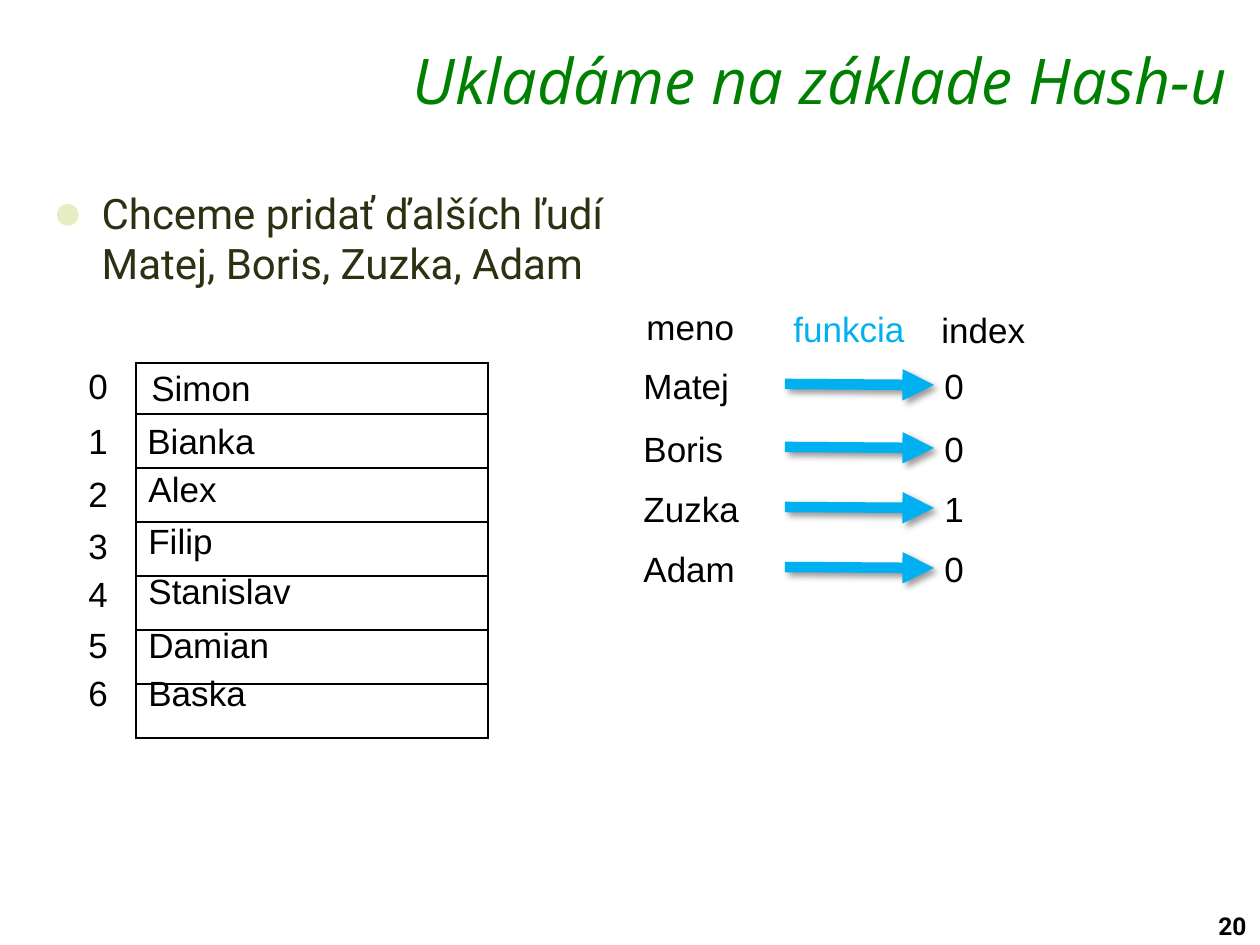
from dataclasses import dataclass

from lxml import etree
from pptx import Presentation
from pptx.dml.color import RGBColor
from pptx.enum.shapes import MSO_CONNECTOR
from pptx.enum.text import MSO_ANCHOR, MSO_AUTO_SIZE, PP_ALIGN
from pptx.oxml import parse_xml
from pptx.oxml.ns import nsdecls, qn
from pptx.util import Emu, Pt

STRAIGHT = MSO_CONNECTOR.STRAIGHT
TOP = MSO_ANCHOR.TOP
LEFT, RIGHT = PP_ALIGN.LEFT, PP_ALIGN.RIGHT
FIT_SHAPE, NO_FIT = MSO_AUTO_SIZE.SHAPE_TO_FIT_TEXT, MSO_AUTO_SIZE.NONE
PX_PER_INCH = 126
LABEL_HEIGHT = 55


@dataclass(frozen=True)
class Theme:
    """Colours, fonts and type sizes of the slide."""
    title: str = "008000"
    body: str = "2B3212"
    bullet: str = "E5EEC2"
    text: str = "000000"
    accent: str = "00B0F0"
    paper: str = "FFFFFF"
    title_font: str = "Open Sans"
    body_font: str = "Roboto"
    label_font: str = "Arial"
    title_size: int = 36
    body_size: int = 24
    label_size: int = 20
    number_size: int = 14


THEME = Theme()


def px(length):
    """Turn px into EMU."""
    return Emu(round(length * 914400 / PX_PER_INCH))


def place(shape, box):
    """Move and size a shape to a box in px."""
    shape.left, shape.top, shape.width, shape.height = map(px, box)


def write_text(text_frame, text, size=THEME.label_size, font=THEME.label_font,
               color=THEME.text, bold=False, italic=False, align=LEFT):
    """Write one formatted paragraph and return it."""
    paragraph = text_frame.paragraphs[0]
    paragraph.text = text
    paragraph.alignment = align
    paragraph.space_before = Pt(0)
    for line_break in paragraph._p.findall(qn("a:br")):
        etree.SubElement(line_break, qn("a:rPr"), sz=str(size * 100))
    for run in paragraph.runs:
        run.font.size = Pt(size)
        run.font.name = font
        run.font.bold = bold
        run.font.italic = italic
        run.font.color.rgb = RGBColor.from_string(color)
    return paragraph


def add_label(shapes, text, box, **text_format):
    """Add a text box that does not wrap."""
    label = shapes.add_textbox(*map(px, box))
    label.text_frame.word_wrap = False
    label.text_frame.auto_size = FIT_SHAPE
    write_text(label.text_frame, text, **text_format)


def fill_title(slide, box):
    """Fill the title placeholder."""
    title = slide.shapes.title
    place(title, box)
    title.text_frame.auto_size = NO_FIT
    title.text_frame.vertical_anchor = TOP
    title.text_frame.margin_top = px(3)
    write_text(title.text_frame, "Ukladáme na základe Hash-u", size=THEME.title_size,
               font=THEME.title_font, color=THEME.title, italic=True, align=RIGHT)


def fill_body(slide, box):
    """Fill the body placeholder with its bullet."""
    body = slide.placeholders[1]
    place(body, box)
    body.text_frame.auto_size = NO_FIT
    body.text_frame.margin_top = px(11)
    paragraph = write_text(body.text_frame,
                           "Chceme pridať ďalších ľudí\vMatej, Boris, Zuzka, Adam",
                           size=THEME.body_size, font=THEME.body_font, color=THEME.body)
    properties = paragraph._p.get_or_add_pPr()
    properties.set("marL", str(px(49)))
    properties.set("indent", str(-px(49)))
    color = etree.SubElement(properties, qn("a:buClr"))
    etree.SubElement(color, qn("a:srgbClr"), val=THEME.bullet)
    etree.SubElement(properties, qn("a:buSzPct"), val="120000")
    etree.SubElement(properties, qn("a:buChar"), char="●")


def format_cell(cell):
    """Give a cell thin borders and a plain fill."""
    properties = cell._tc.get_or_add_tcPr()
    for side in ("lnL", "lnR", "lnT", "lnB"):
        properties.append(parse_xml(
            f'<a:{side} {nsdecls("a")} w="{Pt(1)}"><a:solidFill>'
            f'<a:srgbClr val="{THEME.text}"/></a:solidFill></a:{side}>'))
    cell.fill.solid()
    cell.fill.fore_color.rgb = RGBColor.from_string(THEME.paper)


def add_hash_table(slide, box):
    """Add the seven slots with their indexes and names."""
    left, top, width, height = box
    entries = [
        ("Simon", 3, -3, 126, -5), ("Bianka", -1, 50, 134, 50),
        ("Alex", 0, 98, 95, 103), ("Filip", 0, 150, 91, 155),
        ("Stanislav", 0, 200, 169, 203), ("Damian", 0, 254, 147, 254),
        ("Baska", 0, 302, 123, 302),
    ]
    table = slide.shapes.add_table(len(entries), 1, *map(px, box)).table
    table.first_row = table.horz_banding = False
    first_height = 51
    other_height = (height - first_height) // (len(entries) - 1)
    for index, (name, name_x, name_y, name_width, index_y) in enumerate(entries):
        table.rows[index].height = px(other_height if index else first_height)
        format_cell(table.cell(index, 0))
        add_label(slide.shapes, str(index), (left - 60, top + index_y, 45, LABEL_HEIGHT))
        add_label(slide.shapes, name,
                  (left + name_x, top + name_y, name_width, LABEL_HEIGHT))


def add_arrow(shapes, start, end):
    """Add a thick arrow with a soft shadow."""
    arrow = shapes.add_connector(STRAIGHT, *map(px, start + end))
    arrow.line.color.rgb = RGBColor.from_string(THEME.accent)
    arrow.line.width = Pt(6)
    etree.SubElement(arrow.line._get_or_add_ln(), qn("a:tailEnd"), type="triangle")
    arrow._element.spPr.append(parse_xml(
        f'<a:effectLst {nsdecls("a")}><a:outerShdw blurRad="{Pt(4)}" dist="{Pt(3)}" '
        f'dir="2700000" algn="tl" rotWithShape="0"><a:srgbClr val="{THEME.text}">'
        '<a:alpha val="40000"/></a:srgbClr></a:outerShdw></a:effectLst>'))


def add_mapping(slide, left, top):
    """Add the headings and the rows that map names to indexes."""
    header = slide.shapes.add_group_shape().shapes
    add_label(header, "meno", (left + 3, top, 113, LABEL_HEIGHT))
    add_label(header, "index", (left + 298, top + 3, 110, LABEL_HEIGHT))
    add_label(header, "funkcia", (left + 150, top + 2, 137, LABEL_HEIGHT),
              color=THEME.accent)
    for name, index, offset, width in [("Matej", 0, 59, 112), ("Boris", 0, 122, 106),
                                       ("Zuzka", 1, 182, 122), ("Adam", 0, 242, 117)]:
        row = slide.shapes.add_group_shape().shapes
        row_top = top + offset
        add_label(row, name, (left, row_top, width, LABEL_HEIGHT))
        add_label(row, str(index), (left + 301, row_top, 45, LABEL_HEIGHT))
        add_arrow(row, (left + 154, row_top + 26), (left + 303, row_top + 27))


def main():
    """Build and save the slide."""
    presentation = Presentation()
    presentation.slide_width, presentation.slide_height = px(1260), px(945)
    slide = presentation.slides.add_slide(presentation.slide_layouts[1])
    fill_title(slide, (289, 39, 951, 73))
    fill_body(slide, (40, 176, 1182, 158))
    add_hash_table(slide, (136, 363, 352, 375))
    add_mapping(slide, 631, 299)
    add_label(slide.shapes, "20", (1206, 905, 64, 42), size=THEME.number_size,
              font=THEME.body_font, bold=True)
    presentation.save("out.pptx")


if __name__ == "__main__":
    main()
